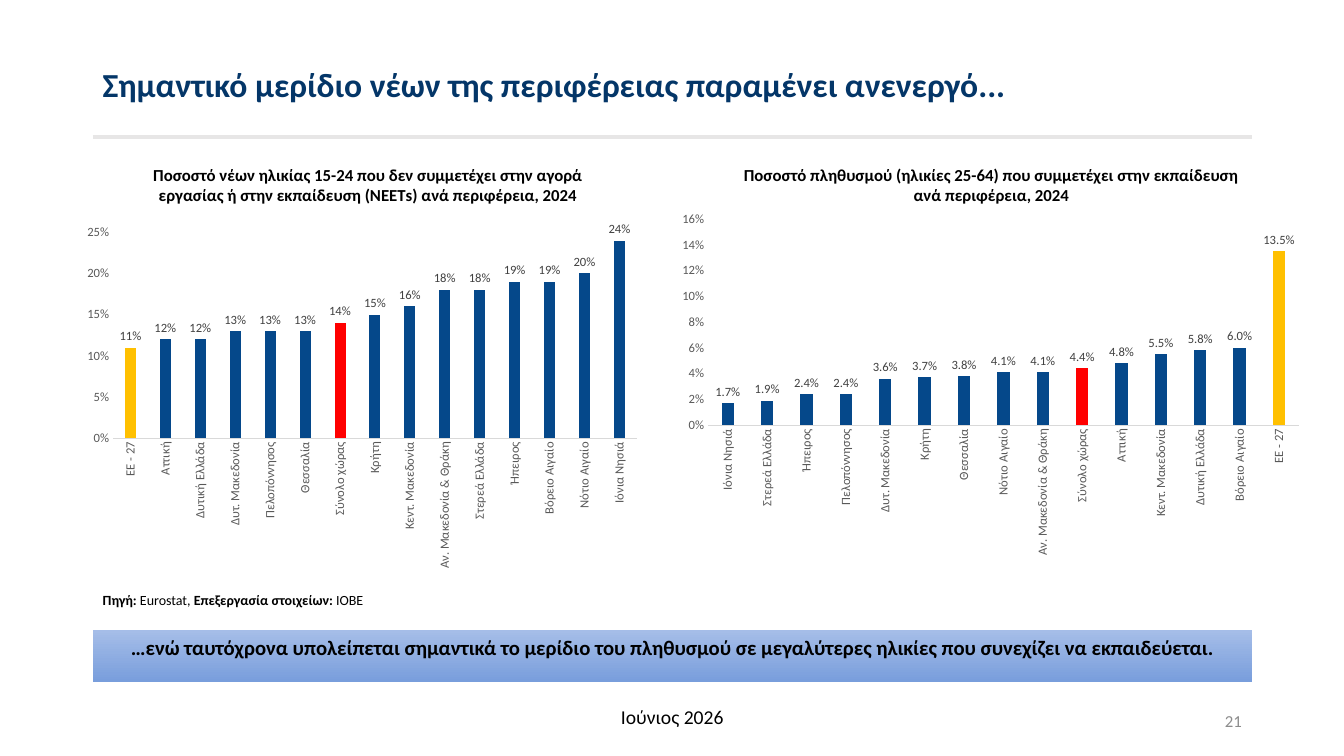
from lxml import etree
from pptx import Presentation
from pptx.chart.data import CategoryChartData as Data
from pptx.dml.color import RGBColor as RGB
from pptx.enum.chart import XL_CHART_TYPE as Kind, XL_LABEL_POSITION as Pos
from pptx.enum.chart import XL_TICK_MARK as Tick
from pptx.enum.shapes import MSO_CONNECTOR as Conn, MSO_SHAPE as Shape
from pptx.enum.text import MSO_ANCHOR as Anchor, PP_ALIGN as Align
from pptx.oxml.ns import qn
from pptx.util import Cm, Pt

BLUE, GOLD, RED = "05488A", "FFC000", "FF0000"
EDGE, WIDE = 2.34, 29.21
NEET = {
    "ΕΕ - 27": 0.11, "Αττική": 0.12, "Δυτική Ελλάδα": 0.12,
    "Δυτ. Μακεδονία": 0.13, "Πελοπόννησος": 0.13, "Θεσσαλία": 0.13,
    "Σύνολο χώρας": 0.14, "Κρήτη": 0.15, "Κεντ. Μακεδονία": 0.16,
    "Αν. Μακεδονία & Θράκη": 0.18, "Στερεά Ελλάδα": 0.18, "Ήπειρος": 0.19,
    "Βόρειο Αιγαίο": 0.19, "Νότιο Αιγαίο": 0.2, "Ιόνια Νησιά": 0.24,
}
LEARN = {
    "Ιόνια Νησιά": 0.017, "Στερεά Ελλάδα": 0.019, "Ήπειρος": 0.024,
    "Πελοπόννησος": 0.024, "Δυτ. Μακεδονία": 0.036, "Κρήτη": 0.037,
    "Θεσσαλία": 0.038, "Νότιο Αιγαίο": 0.041,
    "Αν. Μακεδονία & Θράκη": 0.041, "Σύνολο χώρας": 0.044,
    "Αττική": 0.048, "Κεντ. Μακεδονία": 0.055, "Δυτική Ελλάδα": 0.058,
    "Βόρειο Αιγαίο": 0.06, "ΕΕ - 27": 0.135,
}
MARKS = {"ΕΕ - 27": GOLD, "Σύνολο χώρας": RED}


def tint(item, code):
    """Colour a font, or fill a line or a solid area."""
    if hasattr(item, "solid"):
        item.solid()
        item = item.fore_color
    else:
        item = item.color
    item.rgb = RGB.from_string(code)


def put(item, vals):
    for key, val in vals.items():
        setattr(item, key, val)


def style(font, size, code="000000", bold=False):
    put(font, {"name": "Calibri", "size": Pt(size), "bold": bold})
    tint(font, code)


def write(shape, runs, size, code="000000", anchor=Anchor.TOP, **form):
    """Fill a shape with one paragraph of (text, bold) runs."""
    frame = shape.text_frame
    put(frame, {"word_wrap": True, "vertical_anchor": anchor})
    para = frame.paragraphs[0]
    put(para, form)
    for text, bold in runs:
        run = para.add_run()
        run.text = text
        style(run.font, size, code, bold)


def label(slide, box, runs, size, **form):
    write(slide.shapes.add_textbox(*map(Cm, box)), runs, size, **form)


def rule(slide, y):
    line = slide.shapes.add_connector(
        Conn.STRAIGHT, Cm(EDGE), Cm(y), Cm(EDGE + WIDE), Cm(y))
    tint(line.line, "E7E6E6")
    line.line.width = Pt(3)
    etree.SubElement(line._element.spPr, qn("a:effectLst"))


def band(slide, box, text):
    shape = slide.shapes.add_shape(Shape.RECTANGLE, *map(Cm, box))
    shape.shadow.inherit = False
    shape.line.fill.background()
    shape.fill.gradient()
    shape.fill.gradient_angle = 270
    for stop, code in zip(shape.fill.gradient_stops, ("A5BDE8", "799EDC")):
        tint(stop, code)
    write(shape, [(text, True)], 14.8, alignment=Align.CENTER)


def place(part, index, vals):
    """Set the layout of a chart part as shares of the chart area."""
    for old in part.findall(qn("c:layout")):
        part.remove(old)
    layout = etree.Element(qn("c:layout"))
    manual = etree.SubElement(layout, qn("c:manualLayout"))
    for key, val in vals.items():
        etree.SubElement(manual, qn("c:" + key)).set("val", str(val))
    part.insert(index, layout)


def bars(slide, box, title, spot, vals, form, top, step, plot):
    data = Data(number_format=form)
    data.categories = list(vals)
    data.add_series("Series 1", list(vals.values()))
    chart = slide.shapes.add_chart(
        Kind.COLUMN_CLUSTERED, *map(Cm, box), data).chart
    style(chart.font, 10)
    chart.has_legend = False

    # Title and plot area
    chart.has_title = True
    para = chart.chart_title.text_frame.paragraphs[0]
    run = para.add_run()
    run.text = title
    style(run.font, 12, bold=True)
    mode = {"xMode": "edge", "yMode": "edge"}
    x, y = spot
    place(chart.chart_title._element, 1, {**mode, "x": x, "y": y})
    x, w = plot
    place(chart.plots[0]._element.getparent(), 0, {
        "layoutTarget": "inner", **mode,
        "x": x, "y": 0.188, "w": w, "h": 0.484})

    # Axes
    cat, val = chart.category_axis, chart.value_axis
    for axis in (cat, val):
        put(axis, {"has_major_gridlines": False,
                   "major_tick_mark": Tick.NONE,
                   "minor_tick_mark": Tick.NONE})
        style(axis.tick_labels.font, 9, "595959")
    put(val, {"minimum_scale": 0, "maximum_scale": top, "major_unit": step})
    put(val.tick_labels,
        {"number_format": "0%", "number_format_is_linked": False})
    val.format.line.fill.background()
    tint(cat.format.line, "D9D9D9")
    cat.format.line.width = Pt(0.75)
    body = cat._element.find(qn("c:txPr")).find(qn("a:bodyPr"))
    body.set("rot", "-5400000")
    body.set("vert", "horz")

    # Columns and their values
    group = chart.plots[0]
    put(group, {"gap_width": 219, "overlap": -27,
                "vary_by_categories": False, "has_data_labels": True})
    put(group.data_labels, {
        "show_value": True, "position": Pos.OUTSIDE_END,
        "number_format": form, "number_format_is_linked": False})
    style(group.data_labels.font, 9, "404040")
    series = group.series[0]
    tint(series.format.fill, BLUE)
    for i, name in enumerate(vals):
        if name in MARKS:
            tint(series.points[i].format.fill, MARKS[name])


def main():
    deck = Presentation()
    put(deck, {"slide_width": Cm(33.87), "slide_height": Cm(19.05)})
    slide = deck.slides.add_slide(deck.slide_layouts[6])

    # Heading
    rule(slide, 3.45)
    label(slide, (EDGE, 1.02, WIDE, 2.34),
          [("Σημαντικό μερίδιο νέων της περιφέρειας παραμένει ανενεργό...",
            True)],
          24, code="043668", anchor=Anchor.MIDDLE, line_spacing=0.9)

    # Charts
    bars(slide, (16.89, 3.51, 16.18, 10.72),
         "Ποσοστό πληθυσμού (ηλικίες 25-64) που συμμετέχει στην εκπαίδευση "
         "ανά περιφέρεια, 2024",
         (0.11, 0.05), LEARN, "0.0%", 0.16, 0.02, (0.059, 0.92))
    bars(slide, (1.91, 3.84, 14.43, 10.72),
         "Ποσοστό νέων ηλικίας 15-24 που δεν συμμετέχει στην αγορά εργασίας "
         "ή στην εκπαίδευση (NEETs) ανά περιφέρεια, 2024",
         (0.13, 0.02), NEET, "0%", 0.25, 0.05, (0.065, 0.915))

    # Source and closing message
    label(slide, (EDGE, 14.71, 11.43, 1.02),
          [("Πηγή: ", True), ("Eurostat, ", False),
           ("Επεξεργασία στοιχείων:", True), (" ΙΟΒΕ", False)],
          10, alignment=Align.JUSTIFY, line_spacing=1.15, space_after=Pt(6))
    band(slide, (EDGE, 15.88, WIDE, 1.3),
         "…ενώ ταυτόχρονα υπολείπεται σημαντικά το μερίδιο του πληθυσμού σε "
         "μεγαλύτερες ηλικίες που συνεχίζει να εκπαιδεύεται.")

    # Footer
    label(slide, (11.23, 17.65, 11.43, 1.02), [("Ιούνιος 2026", False)],
          14, alignment=Align.CENTER)
    label(slide, (23.93, 17.65, 7.62, 1.02), [("21", False)], 12,
          code="8C8C8C", anchor=Anchor.MIDDLE, alignment=Align.RIGHT)
    deck.save("out.pptx")


if __name__ == "__main__":
    main()
